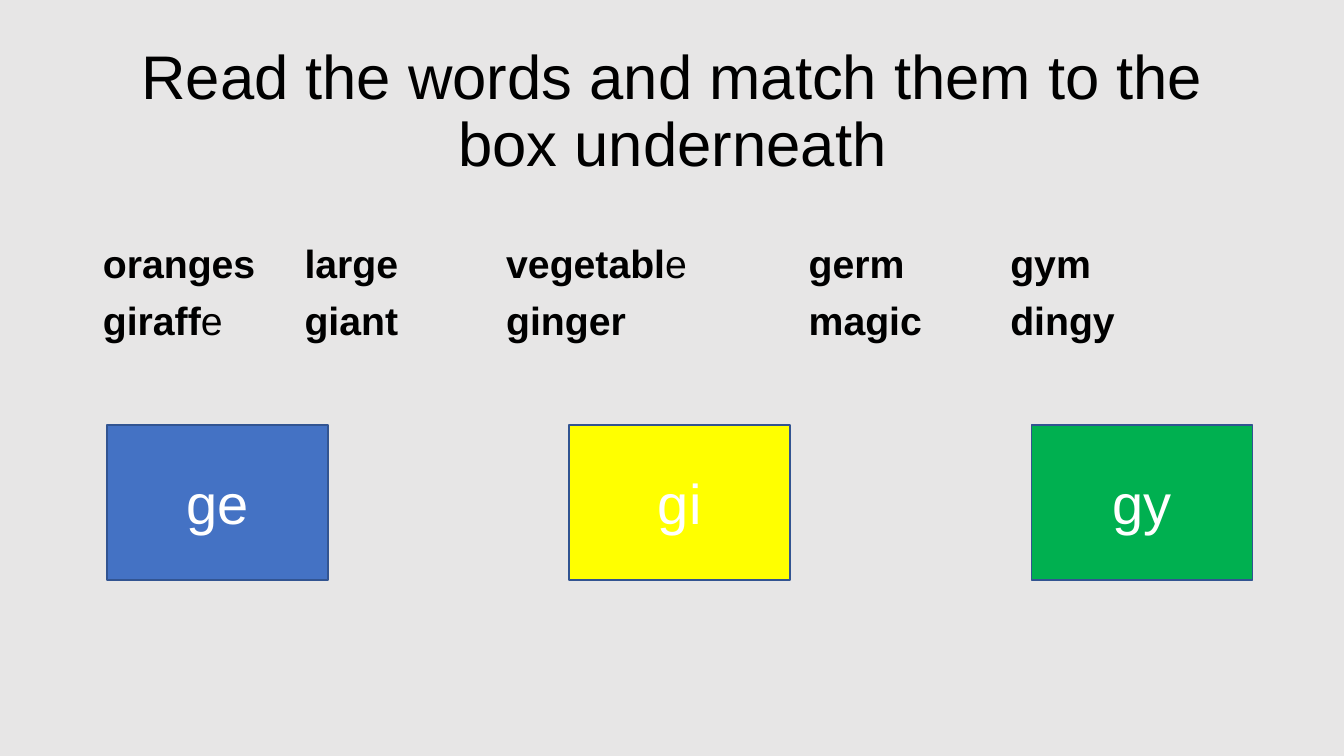
import pptx
import pptx.util
import pptx.dml.color
import pptx.enum.shapes
import pptx.enum.text
import pptx.oxml.ns
import lxml.etree

PX = 914400 / 100.8
ALIGN = pptx.enum.text.PP_ALIGN
MIDDLE = pptx.enum.text.MSO_ANCHOR.MIDDLE


def rgb(value):
    return pptx.dml.color.RGBColor.from_string(value)


def style(r, size, color, bold=False):
    r.font.name = "Arial"
    r.font.size = pptx.util.Pt(size)
    r.font.bold = bold
    r.font.color.rgb = rgb(color)


prs = pptx.Presentation()
prs.slide_width = pptx.util.Inches(13.33)
prs.slide_height = pptx.util.Inches(7.5)
s = prs.slides.add_slide(prs.slide_layouts[6])
s.background.fill.solid()
s.background.fill.fore_color.rgb = rgb("E7E6E6")

# Title
sp = s.shapes.add_textbox(*[int(v * PX) for v in (93, 40, 1159, 146)])
tf = sp.text_frame
tf.word_wrap = True
tf.vertical_anchor = MIDDLE
tf.text = "Read the words and match them to the box underneath"
p = tf.paragraphs[0]
p.alignment = ALIGN.CENTER
p.line_spacing = 0.9
style(p.runs[0], 44, "000000")

# Words in tabbed columns: (text, bold) runs
word_rows = [
    [("oranges\tlarge\t\tvegetabl", True), ("e\t\t", False), ("germ\t\tgym", True)],
    [("giraff", True), ("e\t", False), ("giant \tginger\t\tmagic\tdingy", True)],
]
sp = s.shapes.add_textbox(*[int(v * PX) for v in (93, 240, 1159, 132)])
tf = sp.text_frame
tf.word_wrap = True
for i, row in enumerate(word_rows):
    p = tf.add_paragraph() if i else tf.paragraphs[0]
    p.line_spacing = 0.9
    p.space_before = pptx.util.Pt(10)
    for text, bold in row:
        r = p.add_run()
        r.text = text
        style(r, 28, "000000", bold)
    # Tab stops one inch apart
    tabs = lxml.etree.SubElement(p._p.get_or_add_pPr(), pptx.oxml.ns.qn("a:tabLst"))
    for inch in range(1, 11):
        lxml.etree.SubElement(tabs, pptx.oxml.ns.qn("a:tab"),
                              pos=str(pptx.util.Inches(inch)), algn="l")

# Sound boxes
boxes = [("ge", "4472C4"), ("gi", "FFFF00"), ("gy", "00B050")]
for i, (sound, fill) in enumerate(boxes):
    sp = s.shapes.add_shape(pptx.enum.shapes.MSO_SHAPE.RECTANGLE,
                            *[int(v * PX) for v in (107 + 462 * i, 425, 221, 155)])
    sp.shadow.inherit = False
    sp.fill.solid()
    sp.fill.fore_color.rgb = rgb(fill)
    sp.line.color.rgb = rgb("325491")
    sp.line.width = pptx.util.Pt(1)
    tf = sp.text_frame
    tf.vertical_anchor = MIDDLE
    tf.text = sound
    p = tf.paragraphs[0]
    p.alignment = ALIGN.CENTER
    style(p.runs[0], 40, "FFFFFF")

prs.save("out.pptx")
